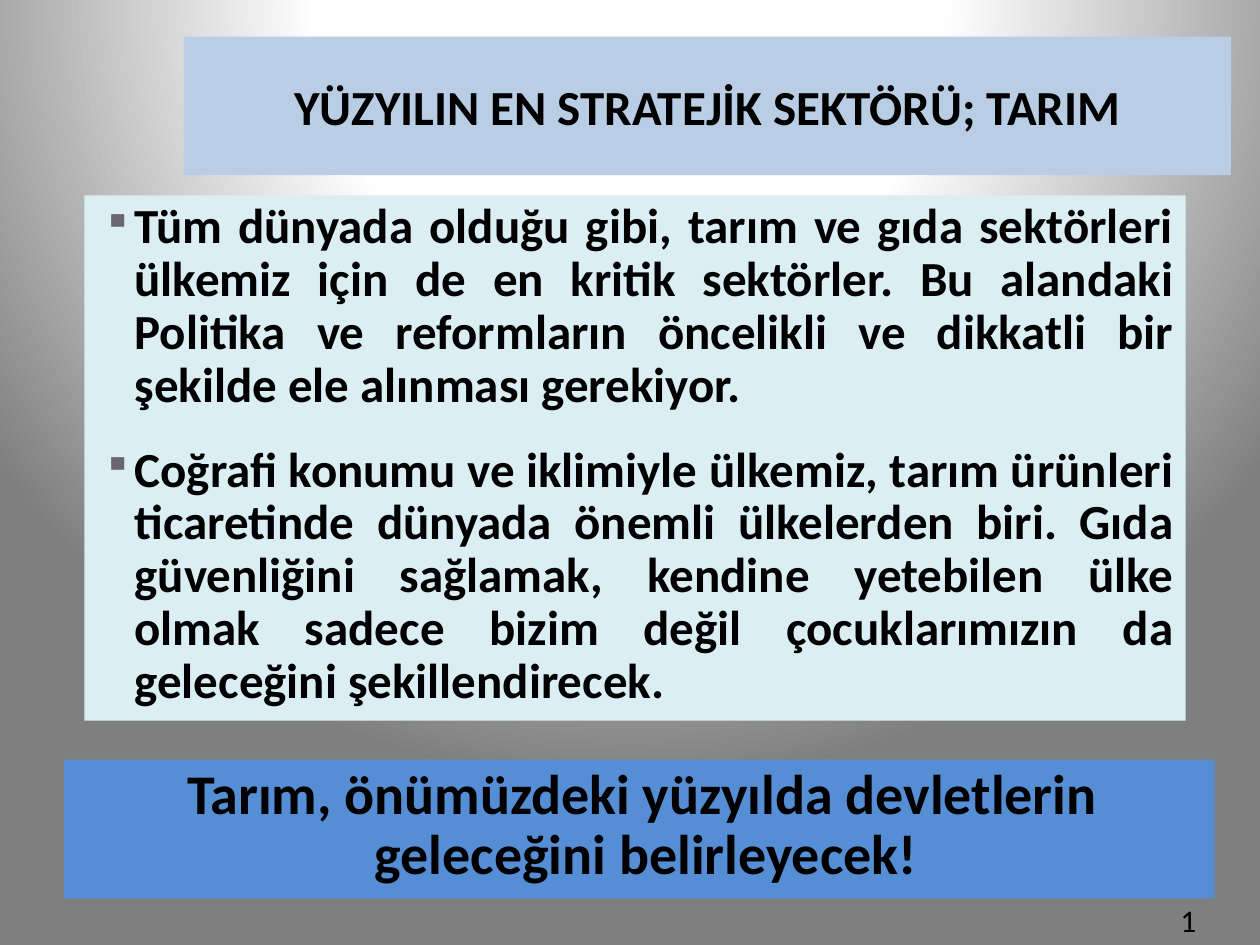
from lxml import etree
from pptx import Presentation
from pptx import util as u
from pptx.dml.color import RGBColor
from pptx.enum import text
from pptx.oxml import parse_xml
from pptx.oxml.ns import nsdecls, qn

PX = 9144
FONT = "Calibri"
BLACK = RGBColor(0x00, 0x00, 0x00)
PALE_BLUE = RGBColor(0xB9, 0xCD, 0xE5)
PALE_CYAN = RGBColor(0xDB, 0xEE, 0xF4)
BLUE = RGBColor(0x55, 0x8E, 0xD5)
BULLET_GRAY = RGBColor(0x69, 0x67, 0x6D)
GRADIENT = ((0, "FFFFFF"), (40000, "FEFEFE"), (100000, "7F7F7F"))

TITLE = "YÜZYILIN EN STRATEJİK SEKTÖRÜ; TARIM"
POINTS = (
    "Tüm dünyada olduğu gibi, tarım ve gıda sektörleri ülkemiz için de en kritik "
    "sektörler. Bu alandaki Politika ve reformların öncelikli ve dikkatli bir "
    "şekilde ele alınması gerekiyor. ",
    "Coğrafi konumu ve iklimiyle ülkemiz, tarım ürünleri ticaretinde dünyada "
    "önemli ülkelerden biri. Gıda güvenliğini sağlamak, kendine yetebilen ülke "
    "olmak sadece bizim değil çocuklarımızın da geleceğini şekillendirecek.",
)
CONCLUSION = "Tarım, önümüzdeki yüzyılda devletlerin geleceğini belirleyecek!\t"


def scale(box):
    """Turn a box in px into EMU."""
    return [u.Emu(side * PX) for side in box]


def style(para, size, bold=True):
    """Set the font of a whole paragraph."""
    font = para.font
    font.name, font.size, font.bold = FONT, u.Pt(size), bold
    font.color.rgb = BLACK


def indent(para):
    """Give a paragraph its hanging indent and tight lines."""
    properties = para._p.get_or_add_pPr()
    properties.set("marL", str(30 * PX))
    properties.set("indent", str(-25 * PX))
    para.line_spacing = 0.9


def add_bullet(para):
    """Give a paragraph a small grey square bullet."""
    properties = para._p.get_or_add_pPr()
    color = etree.SubElement(properties, qn("a:buClr"))
    etree.SubElement(color, qn("a:srgbClr"), val=str(BULLET_GRAY))
    etree.SubElement(properties, qn("a:buSzPct"), val="80000")
    etree.SubElement(properties, qn("a:buChar"), char="▪")


def add_panel(page, box, fill=None):
    """Add a wrapping text box, filled when a colour is given."""
    panel = page.shapes.add_textbox(*scale(box))
    panel.text_frame.word_wrap = True
    if fill is not None:
        panel.fill.solid()
        panel.fill.fore_color.rgb = fill
    return panel.text_frame


def paint_background(page):
    """Fill the page with a round gradient centred above its top."""
    page.background.fill.solid()
    solid = page.background._cSld.find(".//" + qn("a:solidFill"))
    stops = "".join(
        f'<a:gs pos="{place}"><a:srgbClr val="{color}"/></a:gs>'
        for place, color in GRADIENT
    )
    gradient = parse_xml(
        f'<a:gradFill {nsdecls("a")} rotWithShape="1"><a:gsLst>{stops}</a:gsLst>'
        '<a:path path="circle"><a:fillToRect l="50000" t="-80000" r="50000" '
        'b="180000"/></a:path></a:gradFill>'
    )
    solid.getparent().replace(solid, gradient)


def place_title(page, box):
    """Place the title in a rounded panel."""
    title = page.shapes.title
    title.left, title.top, title.width, title.height = scale(box)
    outline = etree.SubElement(title._element.spPr, qn("a:prstGeom"), prst="roundRect")
    etree.SubElement(outline, qn("a:avLst"))
    title.fill.solid()
    title.fill.fore_color.rgb = PALE_BLUE
    frame = title.text_frame
    frame.text = TITLE
    frame.auto_size = text.MSO_AUTO_SIZE.NONE
    frame.vertical_anchor = text.MSO_ANCHOR.MIDDLE
    para = frame.paragraphs[0]
    para.alignment = text.PP_ALIGN.CENTER
    style(para, 28)


def place_points(page, box):
    """Place the justified bullet points."""
    frame = add_panel(page, box, PALE_CYAN)
    for index, point in enumerate(POINTS):
        para = frame.add_paragraph() if index else frame.paragraphs[0]
        para.text = point
        para.alignment = text.PP_ALIGN.JUSTIFY
        indent(para)
        if index:
            para.space_before = u.Pt(18)
        add_bullet(para)
        style(para, 28)


def place_conclusion(page, box):
    """Place the closing statement."""
    para = add_panel(page, box, BLUE).paragraphs[0]
    para.text = CONCLUSION
    para.alignment = text.PP_ALIGN.CENTER
    indent(para)
    style(para, 32)


def place_number(page, box):
    """Place the page number."""
    para = add_panel(page, box).paragraphs[0]
    para.text = "1"
    style(para, 18, bold=False)


def main():
    """Build the deck and save it."""
    deck = Presentation()
    deck.slide_width, deck.slide_height = scale((1000, 750))
    page = deck.slides.add_slide(deck.slide_layouts[5])
    paint_background(page)
    place_title(page, (146, 29, 831, 110))
    place_points(page, (67, 155, 874, 417))
    place_conclusion(page, (51, 603, 913, 110))
    place_number(page, (927, 710, 51, 40))
    deck.save("out.pptx")


if __name__ == "__main__":
    main()
